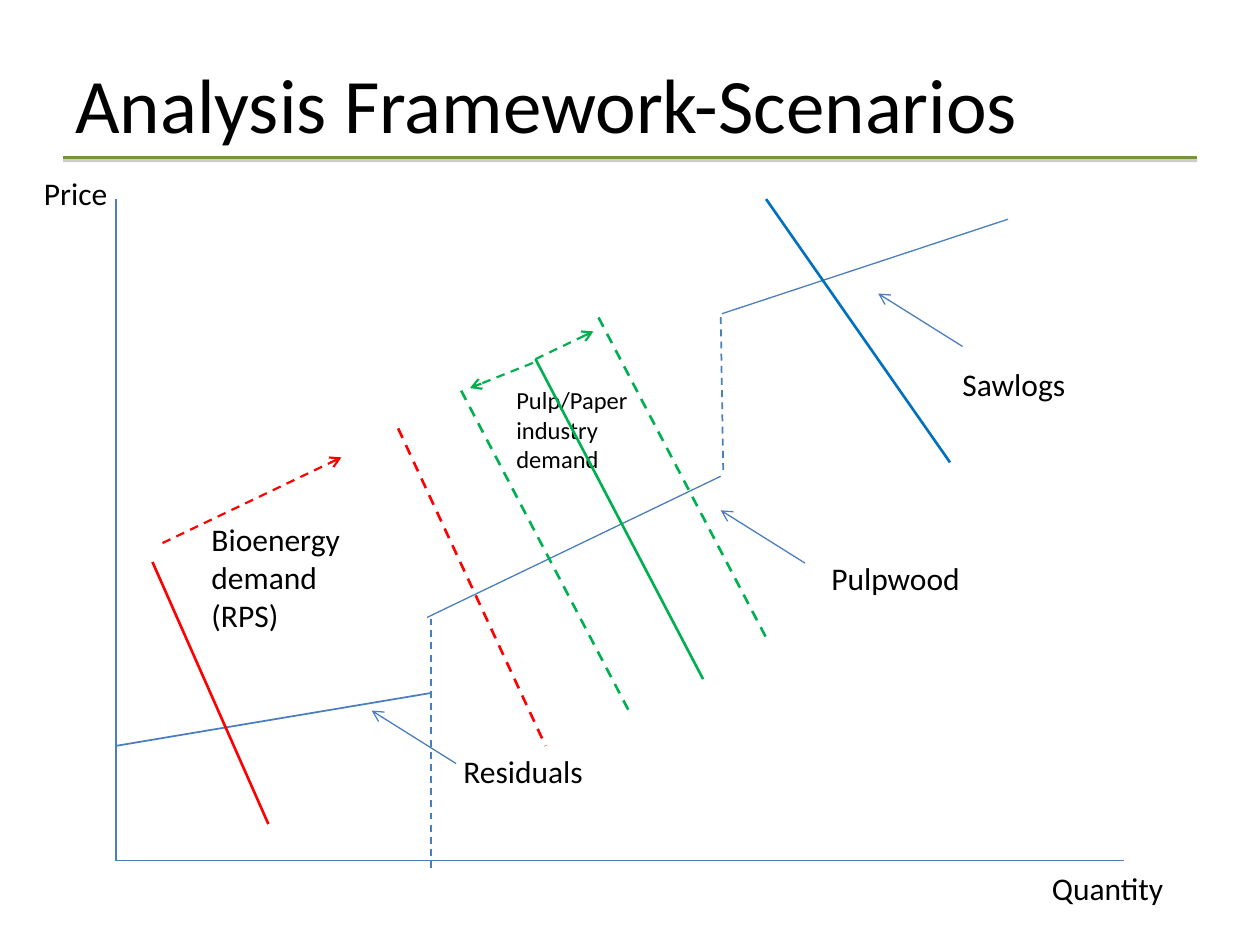
from pptx import Presentation
from pptx.dml.color import RGBColor
from pptx.enum.dml import MSO_LINE
from pptx.enum.shapes import MSO_CONNECTOR
from pptx.enum.text import MSO_ANCHOR, MSO_AUTO_SIZE
from pptx.oxml import parse_xml
from pptx.oxml.ns import nsdecls, qn
from pptx.oxml.xmlchemy import OxmlElement
from pptx.util import Inches, Pt

BLACK = RGBColor(0x00, 0x00, 0x00)
OLIVE = RGBColor(0x77, 0x93, 0x3C)
BLUE = RGBColor(0x4B, 0x7E, 0xBC)
SAWLOG_BLUE = RGBColor(0x00, 0x70, 0xC0)
GREEN = RGBColor(0x00, 0xB0, 0x50)
RED = RGBColor(0xFF, 0x00, 0x00)

ORIGIN = (0.92, 6.83)
PULP_RUN, PULP_DROP = 1.33, 2.54

RULE_SHADOW = (
    f'<a:effectLst {nsdecls("a")}>'
    '<a:outerShdw dist="20320" dir="5400000" rotWithShape="0">'
    '<a:srgbClr val="808080"><a:alpha val="38000"/></a:srgbClr>'
    '</a:outerShdw></a:effectLst>'
)
NO_EFFECTS = f'<a:effectLst {nsdecls("a")}/>'


def add_line(page, start, end, color, width, dashed=False, arrow=False,
             effects=NO_EFFECTS):
    """Draw a straight line; an arrow points at its end."""
    points = [Inches(value) for value in (*start, *end)]
    connector = page.shapes.add_connector(MSO_CONNECTOR.STRAIGHT, *points)
    connector.line.color.rgb = color
    connector.line.width = Pt(width)
    if dashed:
        connector.line.dash_style = MSO_LINE.DASH
    properties = connector.element.spPr
    if arrow:
        tail = OxmlElement("a:tailEnd")
        tail.set("type", "arrow")
        properties.find(qn("a:ln")).append(tail)
    properties.append(parse_xml(effects))


def add_text(page, text, left, top, width, height, size=18):
    box = page.shapes.add_textbox(*map(Inches, (left, top, width, height)))
    frame = box.text_frame
    frame.word_wrap = True
    frame.text = text
    font = frame.paragraphs[0].runs[0].font
    font.name = "Calibri"
    font.size = Pt(size)
    font.color.rgb = BLACK
    return frame


def add_label(page, *args, **options):
    frame = add_text(page, *args, **options)
    frame.auto_size = MSO_AUTO_SIZE.SHAPE_TO_FIT_TEXT


def add_title(page):
    add_line(page, (0.5, 1.25), (9.5, 1.25), OLIVE, 2, effects=RULE_SHADOW)
    frame = add_text(page, "Analysis Framework-Scenarios",
                     0.5, 0.3, 9, 1.03, size=44)
    frame.vertical_anchor = MSO_ANCHOR.MIDDLE


def add_axes(page):
    add_line(page, (0.92, 1.58), ORIGIN, BLUE, 0.75)
    add_line(page, ORIGIN, (8.92, 6.83), BLUE, 0.75)
    add_label(page, "Price", 0.25, 1.33, 0.83, 0.4)
    add_label(page, "Quantity", 8.25, 6.85, 1.25, 0.4)


def add_supply(page):
    """Draw the stepped supply curve and name its three segments."""
    add_line(page, (0.92, 5.92), (3.42, 5.5), BLUE, 1)
    add_line(page, (3.39, 4.9), (5.72, 3.78), BLUE, 0.75)
    add_line(page, (5.73, 2.49), (8, 1.74), BLUE, 0.75)
    add_line(page, (3.42, 6.89), (3.42, 4.91), BLUE, 1, dashed=True)
    add_line(page, (5.74, 3.73), (5.72, 2.49), BLUE, 1, dashed=True)
    segments = [
        ("Residuals", 3.58, 5.92, (2.95, 5.64)),
        ("Pulpwood", 6.5, 4.39, (5.72, 4.05)),
        ("Sawlogs", 7.54, 2.85, (6.97, 2.33)),
    ]
    for name, left, top, (x, y) in segments:
        add_line(page, (x + 0.67, y + 0.42), (x, y), BLUE, 0.75, arrow=True)
        add_label(page, name, left, top, 1.33, 0.4)


def add_demand(page):
    """Draw current demand as solid lines and scenarios as dashed ones."""
    add_label(page, "Bioenergy demand (RPS)", 1.58, 4.08, 1.25, 1.01)
    add_label(page, "Pulp/Paper industry demand", 4, 3.01, 1.17, 0.81, size=14)

    add_line(page, (6.08, 1.58), (7.54, 3.67), SAWLOG_BLUE, 1.5)
    for x, y, dashed in [(4.25, 2.85, False), (4.75, 2.52, True),
                         (3.66, 3.1, True)]:
        add_line(page, (x, y), (x + PULP_RUN, y + PULP_DROP), GREEN, 1.5, dashed)
    add_line(page, (1.21, 4.46), (2.13, 6.54), RED, 1.5)
    add_line(page, (3.16, 3.4), (4.33, 5.92), RED, 1.5, dashed=True)

    shifts = [
        ((1.29, 4.31), (2.71, 3.63), RED),
        ((4.25, 2.85), (4.71, 2.63), GREEN),
        ((4.23, 2.88), (3.73, 3.08), GREEN),
    ]
    for start, end, color in shifts:
        add_line(page, start, end, color, 1.25, dashed=True, arrow=True)


def main():
    deck = Presentation()
    deck.slide_width, deck.slide_height = Inches(10), Inches(7.5)
    page = deck.slides.add_slide(deck.slide_layouts[6])
    add_title(page)
    add_axes(page)
    add_supply(page)
    add_demand(page)
    deck.save("out.pptx")


if __name__ == "__main__":
    main()
